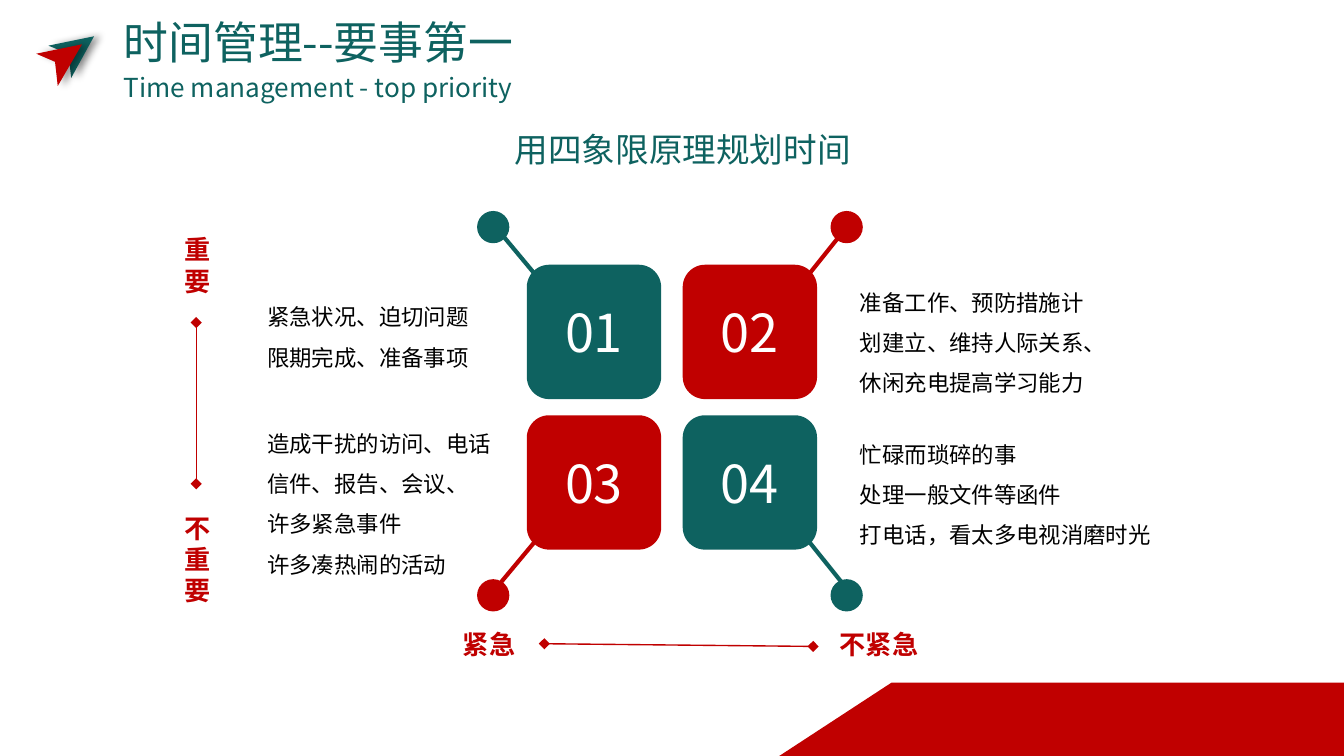
from dataclasses import dataclass

from lxml.etree import SubElement as Sub
from pptx import Presentation
from pptx.dml.color import RGBColor as Rgb
from pptx.enum.shapes import MSO_CONNECTOR as Conn, MSO_SHAPE as Kind
from pptx.enum.text import MSO_ANCHOR as Anchor, MSO_AUTO_SIZE as Fit, PP_ALIGN as Align
from pptx.oxml.ns import qn
from pptx.util import Inches, Pt


@dataclass(frozen=True)
class Theme:
    font: str = "Noto Sans CJK SC"
    teal: str = "0E6260"
    red: str = "C00000"
    white: str = "FFFFFF"
    black: str = "000000"
    title: int = 24
    lead: int = 18
    tile: int = 28
    label: int = 14
    body: int = 12


T = Theme()


@dataclass(frozen=True)
class Quad:
    num: str
    col: int
    row: int
    color: str
    box: tuple
    lines: tuple

    def spot(self, left: float, top: float, wide: float, high: float) -> tuple:
        """Give the point for this quadrant, from the first one and the pitch."""
        return left + wide * self.col, top + high * self.row


@dataclass(frozen=True)
class Label:
    text: str
    box: tuple


@dataclass(frozen=True)
class Axis:
    start: tuple
    end: tuple


QUADS = (
    Quad("01", 0, 0, T.teal, (1.89, 2.11, 1.78, 0.67),
         ("紧急状况、迫切问题", "限期完成、准备事项")),
    Quad("02", 1, 0, T.red, (6.3, 2, 2, 1.01),
         ("准备工作、预防措施计划建立、维持人际关系、休闲充电提高学习能力",)),
    Quad("03", 0, 1, T.red, (1.89, 3.05, 2, 1.31),
         ("造成干扰的访问、电话", "信件、报告、会议、", "许多紧急事件", "许多凑热闹的活动")),
    Quad("04", 1, 1, T.teal, (6.3, 3.13, 2.64, 1.01),
         ("忙碌而琐碎的事", "处理一般文件等函件", "打电话，看太多电视消磨时光")),
)
LABELS = (
    Label("紧急", (3.18, 4.63, 0.92, 0.34)),
    Label("不紧急", (6.08, 4.63, 0.92, 0.34)),
    Label("重要", (1.24, 1.69, 0.46, 0.57)),
    Label("不重要", (1.24, 3.76, 0.46, 0.81)),
)
AXES = (Axis((4.05, 4.79), (6.05, 4.81)), Axis((1.46, 2.4), (1.46, 3.6)))
WINGS = (
    (T.teal, ((0.7, 0.27), (0.53, 0.58), (0.51, 0.4), (0.36, 0.34))),
    (T.red, ((0.61, 0.33), (0.43, 0.64), (0.41, 0.46), (0.27, 0.4))),
)


def inch(nums) -> list:
    return [Inches(n) for n in nums]


def write(frame, *lines: str, size: int, color: str, bold: bool = False,
          align=Align.LEFT, space: float = 1.0) -> None:
    for i, line in enumerate(lines):
        para = frame.paragraphs[0] if i == 0 else frame.add_paragraph()
        para.alignment, para.line_spacing = align, space
        run = para.add_run()
        run.text = line
        font = run.font
        font.size, font.bold, font.name = Pt(size), bold, T.font
        font.color.rgb = Rgb.from_string(color)
        Sub(font._element, qn("a:ea")).set("typeface", T.font)


def note(slide, box: tuple, *lines: str, wrap: bool = True, **form) -> None:
    frame = slide.shapes.add_textbox(*inch(box)).text_frame
    frame.word_wrap, frame.auto_size = wrap, Fit.SHAPE_TO_FIT_TEXT
    write(frame, *lines, **form)


def paint(shape, color: str) -> None:
    shape.fill.solid()
    shape.fill.fore_color.rgb = Rgb.from_string(color)
    shape.line.fill.background()
    shape.shadow.inherit = False


def block(shapes, kind, box: tuple, color: str):
    shape = shapes.add_shape(kind, *inch(box))
    paint(shape, color)
    return shape


def line(shapes, start: tuple, end: tuple, color: str, width: float):
    link = shapes.add_connector(Conn.STRAIGHT, *inch(start + end))
    link.line.color.rgb = Rgb.from_string(color)
    link.line.width = Pt(width)
    Sub(link._element.spPr, qn("a:effectLst"))
    return link


def head(slide) -> None:
    title = slide.shapes.title
    title.left, title.top, title.width, title.height = inch((0.82, 0.06, 3.7, 0.5))
    frame = title.text_frame
    frame.vertical_anchor, frame.auto_size = Anchor.TOP, Fit.NONE
    write(frame, "时间管理--要事第一", size=T.title, color=T.teal)
    note(slide, (0.82, 0.48, 3.24, 0.34), "Time management - top priority",
         wrap=False, size=T.label, color=T.teal)
    note(slide, (3.38, 0.91, 3.4, 0.4), "用四象限原理规划时间",
         size=T.lead, color=T.teal, align=Align.CENTER)


def tile(slide, quad: Quad) -> None:
    box = quad.spot(3.92, 1.97, 1.16, 1.12) + (1, 1)
    shape = block(slide.shapes, Kind.ROUNDED_RECTANGLE, box, quad.color)
    shape.text_frame.vertical_anchor = Anchor.MIDDLE
    write(shape.text_frame, quad.num, size=T.tile, color=T.white, align=Align.CENTER)


def pin(slide, quad: Quad) -> None:
    """Draw the stalk and dot that point out from a tile's outer corner."""
    shapes = slide.shapes.add_group_shape().shapes
    far = quad.spot(3.73, 1.74, 2.53, 2.59)
    near = quad.spot(3.98, 2.04, 2.04, 1.99)
    line(shapes, far, near, quad.color, 2.25)
    dot = quad.spot(3.55, 1.57, 2.63, 2.74) + (0.24, 0.24)
    block(shapes, Kind.OVAL, dot, quad.color)


def scale(slide, axis: Axis) -> None:
    link = line(slide.shapes, axis.start, axis.end, T.red, 0.75)
    for tag in ("a:headEnd", "a:tailEnd"):
        Sub(link.line._get_or_add_ln(), qn(tag)).set("type", "diamond")


def band(slide) -> None:
    """Draw the slanted footer: a tall preset turned on its side."""
    shape = block(slide.shapes, Kind.FLOWCHART_MANUAL_INPUT,
                  (7.62, 3.25, 0.55, 4.21), T.red)
    shape.rotation = 270
    shape._element.spPr.xfrm.set("flipH", "1")


def wing(slide, color: str, dots: tuple) -> None:
    first, *rest = [inch(dot) for dot in dots]
    path = slide.shapes.build_freeform(*first)
    path.add_line_segments(rest, close=True)
    shape = path.convert_to_shape()
    paint(shape, color)
    glow = Sub(shape._element.spPr.find(qn("a:effectLst")), qn("a:outerShdw"),
               blurRad=str(Pt(4)), dist=str(Pt(3)), dir="0", algn="l", rotWithShape="0")
    tint = Sub(glow, qn("a:srgbClr"), val=T.black)
    Sub(tint, qn("a:alpha"), val="40000")


def main() -> None:
    deck = Presentation()
    deck.slide_width = Inches(10)
    deck.slide_height = Inches(10) * 9 // 16
    slide = deck.slides.add_slide(deck.slide_layouts[5])
    head(slide)
    for quad in QUADS:
        tile(slide, quad)
    for quad in QUADS:
        pin(slide, quad)
        note(slide, quad.box, *quad.lines, size=T.body, color=T.black, space=1.5)
    for label in LABELS:
        note(slide, label.box, label.text, size=T.label, color=T.red,
             bold=True, align=Align.CENTER)
    for axis in AXES:
        scale(slide, axis)
    band(slide)
    for color, dots in WINGS:
        wing(slide, color, dots)
    deck.save("out.pptx")


if __name__ == "__main__":
    main()
